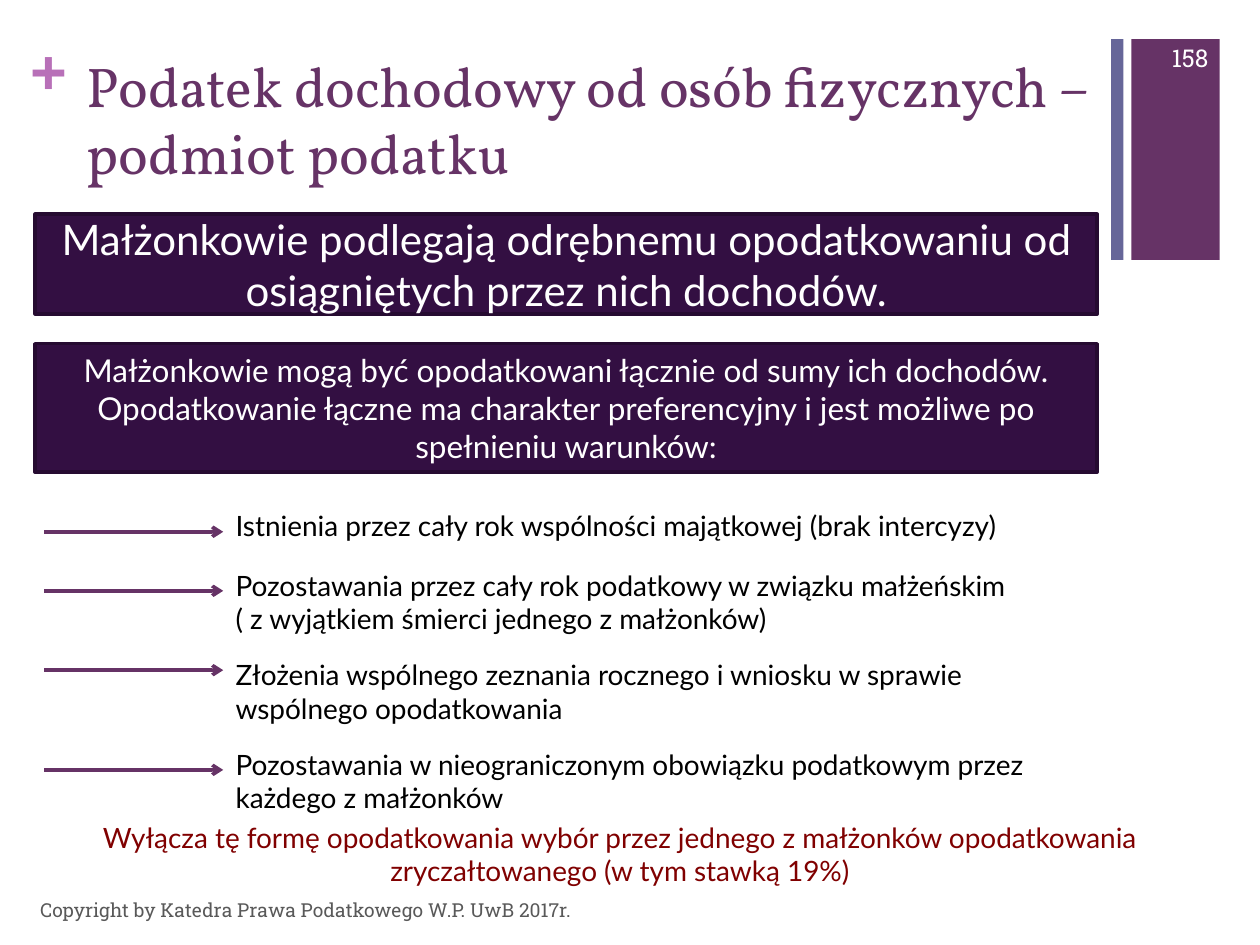
from dataclasses import dataclass

from lxml import etree
from pptx import Presentation
from pptx import util as u
from pptx.dml.color import RGBColor
from pptx.enum import shapes, text
from pptx.oxml import ns
from pptx.slide import Slide


@dataclass(frozen=True)
class Style:
    font: str
    size: float
    color: str
    bold: bool = False


@dataclass(frozen=True)
class Theme:
    purple: str = "663366"
    blue: str = "666699"
    panel: str = "330F42"
    panel_border: str = "260B31"
    line_width: float = 2
    plus: Style = Style("Arial", 36, "B870B8", True)
    title: Style = Style("Vollkorn", 32, "663366")
    footer: Style = Style("Roboto Slab", 11, "595959")
    number: Style = Style("Roboto Slab", 14, "FFFFFF")
    rule: Style = Style("Lato", 24, "FFFFFF")
    exception: Style = Style("Lato", 18, "FFFFFF")
    condition: Style = Style("Lato", 16, "000000")
    warning: Style = Style("Lato", 16, "800000")


@dataclass(frozen=True)
class Box:
    left: float
    top: float
    width: float
    height: float

    def lengths(self) -> list[u.Length]:
        return [u.Cm(value) for value in (self.left, self.top, self.width, self.height)]


@dataclass(frozen=True)
class Label:
    box: Box
    wording: str
    style: Style
    align: text.PP_ALIGN = text.PP_ALIGN.LEFT
    anchor: text.MSO_ANCHOR = text.MSO_ANCHOR.TOP
    inset: bool = True
    grow: bool = False


@dataclass(frozen=True)
class Panel:
    top: float
    height: float
    wording: str
    style: Style


@dataclass(frozen=True)
class Condition:
    top: float
    width: float
    height: float
    arrow_y: float
    wording: str


THEME = Theme()
LEFT, CENTER, RIGHT = text.PP_ALIGN.LEFT, text.PP_ALIGN.CENTER, text.PP_ALIGN.RIGHT
MIDDLE = text.MSO_ANCHOR.MIDDLE
ARROW_LEFT, CONDITION_LEFT = 0.89, 4.5
PANEL_LEFT, PANEL_WIDTH = 0.71, 21.41

BARS = [
    (Box(22.81, 0.79, 1.78, 4.45), THEME.purple),
    (Box(22.4, 0.79, 0.25, 4.45), THEME.blue),
]
LABELS = [
    Label(Box(0.61, 0.64, 0.74, 1.55), "+", THEME.plus, inset=False, grow=True),
    Label(Box(1.5, 0.91, 20.98, 3.1),
          "Podatek dochodowy od osób fizycznych – podmiot podatku", THEME.title),
    Label(Box(0.56, 17.83, 17.02, 1.02),
          "Copyright by Katedra Prawa Podatkowego W.P. UwB 2017r.",
          THEME.footer, anchor=MIDDLE),
    Label(Box(23.06, 0.66, 1.55, 1.02), "158", THEME.number, RIGHT, MIDDLE),
    Label(Box(1.3, 16.41, 22.4, 1.63),
          "Wyłącza tę formę opodatkowania wybór przez jednego z małżonków "
          "opodatkowania zryczałtowanego (w tym stawką 19%)",
          THEME.warning, CENTER, grow=True),
]
PANELS = [
    Panel(4.32, 2.01,
          "Małżonkowie podlegają odrębnemu opodatkowaniu od osiągniętych "
          "przez nich dochodów.", THEME.rule),
    Panel(6.93, 2.59,
          "Małżonkowie mogą być opodatkowani łącznie od sumy ich dochodów. "
          "Opodatkowanie łączne ma charakter preferencyjny i jest możliwe po "
          "spełnieniu warunków:", THEME.exception),
]
CONDITIONS = [
    Condition(10.13, 17.4, 0.94, 10.72,
              "Istnienia przez cały rok wspólności majątkowej (brak intercyzy)"),
    Condition(11.33, 16.21, 1.63, 11.91,
              "Pozostawania przez cały rok podatkowy w związku małżeńskim "
              "( z wyjątkiem śmierci jednego z małżonków)"),
    Condition(13.13, 16.61, 1.63, 13.51,
              "Złożenia wspólnego zeznania rocznego i wniosku w sprawie "
              "wspólnego opodatkowania"),
    Condition(14.94, 17.81, 1.63, 15.52,
              "Pozostawania w nieograniczonym obowiązku podatkowym przez\n"
              "każdego z małżonków"),
]


def write(frame, wording: str, style: Style, align: text.PP_ALIGN) -> None:
    frame.text = wording
    frame.word_wrap = True
    for paragraph in frame.paragraphs:
        paragraph.alignment = align
        for run in paragraph.runs:
            run.font.name = style.font
            run.font.size = u.Pt(style.size)
            run.font.bold = style.bold
            run.font.color.rgb = RGBColor.from_string(style.color)


def add_rectangle(slide: Slide, box: Box, fill: str):
    shape = slide.shapes.add_shape(shapes.MSO_SHAPE.RECTANGLE, *box.lengths())
    shape.shadow.inherit = False
    shape.fill.solid()
    shape.fill.fore_color.rgb = RGBColor.from_string(fill)
    shape.line.fill.background()
    return shape


def add_label(slide: Slide, label: Label) -> None:
    frame = slide.shapes.add_textbox(*label.box.lengths()).text_frame
    write(frame, label.wording, label.style, label.align)
    frame.vertical_anchor = label.anchor
    if label.grow:
        frame.auto_size = text.MSO_AUTO_SIZE.SHAPE_TO_FIT_TEXT
    if not label.inset:
        frame.margin_left = frame.margin_right = 0
        frame.margin_top = frame.margin_bottom = 0


def add_panel(slide: Slide, panel: Panel) -> None:
    box = Box(PANEL_LEFT, panel.top, PANEL_WIDTH, panel.height)
    shape = add_rectangle(slide, box, THEME.panel)
    shape.line.color.rgb = RGBColor.from_string(THEME.panel_border)
    shape.line.width = u.Pt(THEME.line_width)
    shape.text_frame.vertical_anchor = MIDDLE
    write(shape.text_frame, panel.wording, panel.style, CENTER)


def add_arrow(slide: Slide, y: float) -> None:
    connector = slide.shapes.add_connector(
        shapes.MSO_CONNECTOR.STRAIGHT,
        u.Cm(ARROW_LEFT), u.Cm(y), u.Cm(CONDITION_LEFT), u.Cm(y))
    connector.line.color.rgb = RGBColor.from_string(THEME.purple)
    connector.line.width = u.Pt(THEME.line_width)
    etree.SubElement(connector.line._get_or_add_ln(), ns.qn("a:tailEnd"), type="arrow")
    etree.SubElement(connector._element.spPr, ns.qn("a:effectLst"))


def add_condition(slide: Slide, condition: Condition) -> None:
    box = Box(CONDITION_LEFT, condition.top, condition.width, condition.height)
    add_label(slide, Label(box, condition.wording, THEME.condition, grow=True))
    add_arrow(slide, condition.arrow_y)


def main() -> None:
    presentation = Presentation()
    presentation.slide_width = u.Cm(25.4)
    presentation.slide_height = u.Cm(19.05)
    slide = presentation.slides.add_slide(presentation.slide_layouts[6])
    for box, fill in BARS:
        add_rectangle(slide, box, fill)
    for label in LABELS:
        add_label(slide, label)
    for panel in PANELS:
        add_panel(slide, panel)
    for condition in CONDITIONS:
        add_condition(slide, condition)
    presentation.save("out.pptx")


if __name__ == "__main__":
    main()
